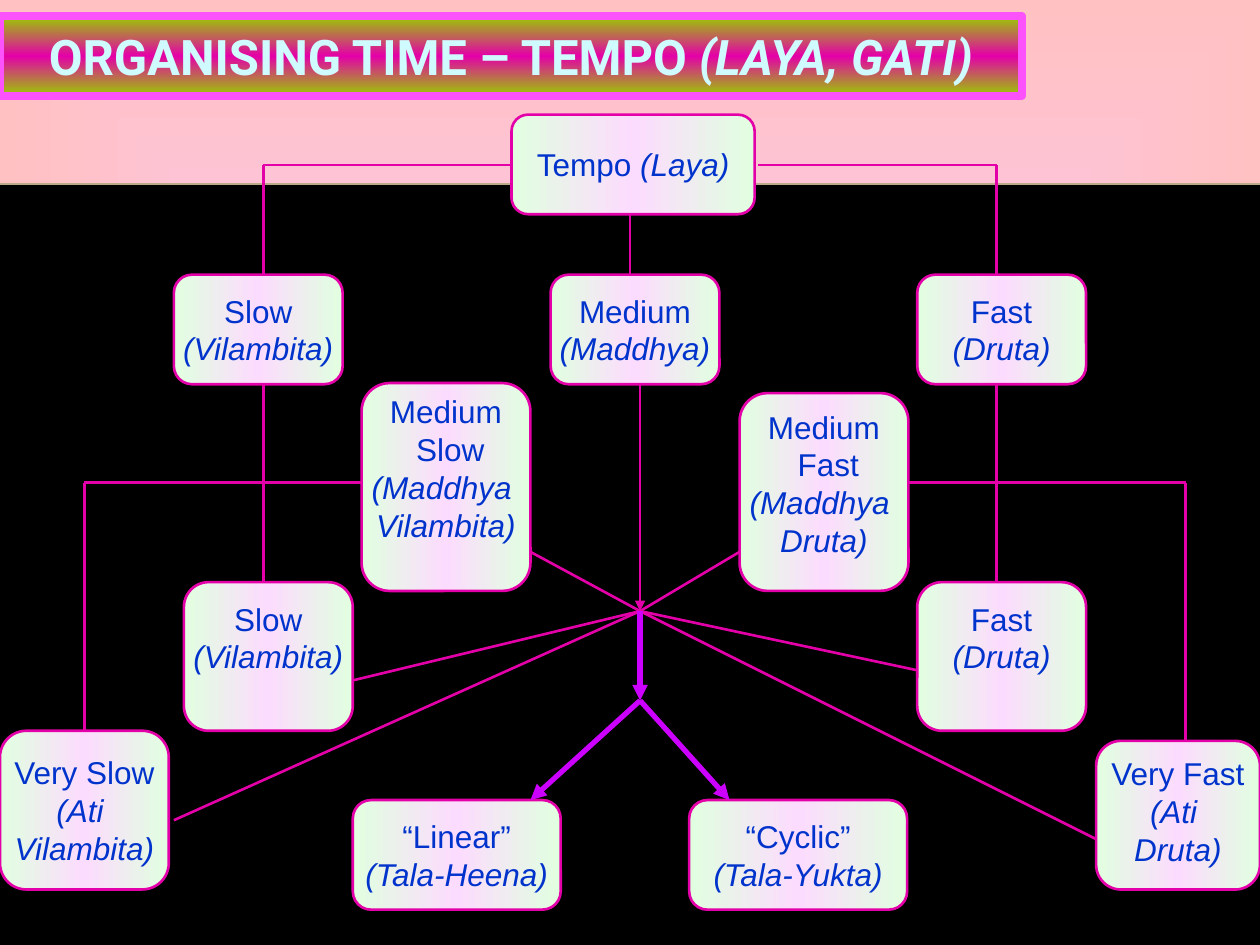
from dataclasses import dataclass
from itertools import pairwise
from lxml.etree import SubElement
from pptx import Presentation
from pptx.dml.color import RGBColor
from pptx.enum.shapes import MSO_CONNECTOR, MSO_SHAPE
from pptx.enum.text import MSO_ANCHOR, PP_ALIGN
from pptx.oxml.ns import qn
from pptx.util import Inches, Pt


@dataclass(frozen=True)
class Theme:
    page: tuple = ("FDC7F8", "FFC1C1")
    banner: tuple = ("99CC00", "E400A8", "99CC00")
    node: tuple = ("E1FEE0", "FCDCFE", "E1FEE0")
    panel: str = "000000"
    rule: str = "BBAA8A"
    banner_edge: str = "FC52FC"
    banner_text: str = "D0FBFE"
    edge: str = "E400A8"
    arrow: str = "CC00FF"
    text: str = "0033CC"
    title_font: str = "Roboto"
    body_font: str = "Arial"
    title_size: int = 28
    body_size: int = 18


@dataclass(frozen=True)
class Box:
    x: float
    y: float
    w: float
    h: float

    @property
    def right(self):
        return self.x + self.w

    @property
    def bottom(self):
        return self.y + self.h

    def lengths(self):
        return [Inches(v) for v in (self.x, self.y, self.w, self.h)]


T = Theme()


def rgb(code):
    return RGBColor.from_string(code)


def gradient(fill, root, colors, angle=None):
    """Spread colors evenly; without an angle they run from the centre out."""
    fill.gradient()
    grad = root.find(".//" + qn("a:gradFill"))
    for child in list(grad):
        grad.remove(child)
    stops = SubElement(grad, qn("a:gsLst"))
    for i, color in enumerate(colors):
        gs = SubElement(stops, qn("a:gs"), pos=str(100000 * i // (len(colors) - 1)))
        SubElement(gs, qn("a:srgbClr"), val=color)
    if angle is None:
        shade = SubElement(grad, qn("a:path"), path="shape")
        SubElement(shade, qn("a:fillToRect"), l="50000", t="50000", r="50000", b="50000")
    else:
        SubElement(grad, qn("a:lin"), ang=str(angle * 60000), scaled="0")


def outline(line, color, width):
    line.color.rgb = rgb(color)
    line.width = Pt(width)


def style(p, font, size, color):
    p.alignment = PP_ALIGN.CENTER
    p.font.name, p.font.size, p.font.color.rgb = font, Pt(size), rgb(color)


def add_runs(p, plain, italic=""):
    for text, slanted in ((plain, False), (italic, True)):
        if text:
            r = p.add_run()
            r.text = text
            r.font.italic = slanted


def route(s, *points, color=T.edge, width=1.5, arrow=False):
    """Join successive points with straight connectors."""
    for a, b in pairwise(points):
        c = s.shapes.add_connector(MSO_CONNECTOR.STRAIGHT, *map(Inches, a + b))
        outline(c.line, color, width)
        if arrow:
            SubElement(c.line._get_or_add_ln(), qn("a:tailEnd"), type="triangle")
        SubElement(c._element.spPr, qn("a:effectLst"))


def backdrop(s, box):
    gradient(s.background.fill, s._element, T.page)
    sp = s.shapes.add_shape(MSO_SHAPE.RECTANGLE, *box.lengths())
    sp.shadow.inherit = False
    sp.fill.solid()
    sp.fill.fore_color.rgb = rgb(T.panel)
    sp.line.fill.background()
    route(s, (box.x, box.y), (box.right, box.y), color=T.rule, width=1)


def banner(s, box, plain, italic):
    sp = s.shapes.title
    sp.left, sp.top, sp.width, sp.height = box.lengths()
    gradient(sp.fill, sp._element.spPr, T.banner, 90)
    outline(sp.line, T.banner_edge, 4.5)
    tf = sp.text_frame
    tf.vertical_anchor = MSO_ANCHOR.MIDDLE
    p = tf.paragraphs[0]
    style(p, T.title_font, T.title_size, T.banner_text)
    p.font.bold = True
    p.space_before = Pt(4)
    add_runs(p, plain, italic)


def node(s, box, lines, anchor=MSO_ANCHOR.MIDDLE, lift=0):
    """Rounded box of (plain, italic) lines; lift is extra space below them."""
    sp = s.shapes.add_shape(MSO_SHAPE.ROUNDED_RECTANGLE, *box.lengths())
    sp.shadow.inherit = False
    gradient(sp.fill, sp._element.spPr, T.node, 0)
    outline(sp.line, T.edge, 1.5)
    tf = sp.text_frame
    tf.word_wrap = False
    tf.vertical_anchor = anchor
    tf.margin_bottom = Inches(0.05 + lift)
    for i, line in enumerate(lines):
        p = tf.add_paragraph() if i else tf.paragraphs[0]
        style(p, T.body_font, T.body_size, T.text)
        add_runs(p, *line)


def tempo_tree(s, area):
    x, y = area.x, area.y
    root = Box(x + 4.06, y, 1.93, 0.79)
    slow, medium, fast = [Box(x + dx, y + 1.27, 1.34, 0.87) for dx in (1.38, 4.37, 7.28)]
    slow2, fast2 = [Box(x + dx, y + 3.71, 1.34, 1.18) for dx in (1.46, 7.28)]
    mid_slow = Box(x + 2.87, y + 2.13, 1.34, 1.65)
    mid_fast = Box(x + 5.87, y + 2.21, 1.34, 1.57)
    very_slow = Box(x, y + 4.89, 1.34, 1.26)
    very_fast = Box(area.right - 1.3, y + 4.97, 1.3, 1.18)
    linear = Box(x + 2.8, y + 5.44, 1.65, 0.87)
    cyclic = Box(x + 5.47, y + 5.44, 1.73, 0.87)

    # Tempo boxes
    slow_text = [("Slow",), ("", "(Vilambita)")]
    fast_text = [("Fast",), ("", "(Druta)")]
    node(s, root, [("Tempo ", "(Laya)")])
    node(s, slow, slow_text)
    node(s, medium, [("Medium",), ("", "(Maddhya)")])
    node(s, fast, fast_text)
    node(s, slow2, slow_text, lift=0.3)
    node(s, fast2, fast_text, lift=0.3)
    node(s, mid_slow, [("Medium",), (" Slow",), ("", "(Maddhya "), ("", "Vilambita)")], lift=0.3)
    node(s, mid_fast, [("Medium",), (" Fast",), ("", "(Maddhya "), ("", "Druta)")], MSO_ANCHOR.TOP)
    node(s, very_slow, [("Very Slow",), ("", "(Ati "), ("", "Vilambita)")])
    node(s, very_fast, [("Very Fast",), ("", "(Ati "), ("", "Druta)")], MSO_ANCHOR.TOP)
    node(s, linear, [("“Linear”",), ("", "(Tala-Heena)")])
    node(s, cyclic, [("“Cyclic”",), ("", "(Tala-Yukta)")])

    # Branches from the root and down each side
    shoulder, branch = y + 0.4, y + 2.92
    sides = (
        (root.x, x + 2.09, slow, slow2, mid_slow.x, x + 0.67, very_slow),
        (root.right + 0.03, x + 7.91, fast, fast2, mid_fast.right, x + 9.41, very_fast),
    )
    for start, stem, upper, lower, inner, outer, last in sides:
        route(s, (start, shoulder), (stem, shoulder), (stem, upper.y))
        route(s, (stem, upper.bottom), (stem, lower.y))
        route(s, (inner, branch), (outer, branch), (outer, last.y))
    route(s, (x + 5, root.bottom), (x + 5, medium.y))

    # Every tempo meets at the hub
    hub = (x + 5.08, y + 3.94)
    route(s, (hub[0], medium.bottom), hub, arrow=True)
    for start in (
        (mid_slow.right, y + 3.47), (mid_fast.x, y + 3.47),
        (slow2.right, y + 4.49), (fast2.x, y + 4.41),
        (very_slow.right + 0.04, y + 5.6), (very_fast.x, y + 5.75),
    ):
        route(s, start, hub)

    # The hub splits into the two kinds of time
    fork = (hub[0], y + 4.65)
    for start, end in ((fork, (x + 4.21, linear.y)), (fork, (x + 5.79, cyclic.y)), (hub, fork)):
        route(s, start, end, color=T.arrow, width=3, arrow=True)


def main():
    prs = Presentation()
    prs.slide_width, prs.slide_height = Inches(10), Inches(7.5)
    s = prs.slides.add_slide(prs.slide_layouts[5])
    backdrop(s, Box(0, 1.46, 10, 6.04))
    banner(s, Box(0, 0.13, 8.11, 0.63), "ORGANISING TIME – TEMPO ", "(LAYA, GATI)")
    tempo_tree(s, Box(0, 0.91, 10, 6.31))
    prs.save("out.pptx")


if __name__ == "__main__":
    main()
